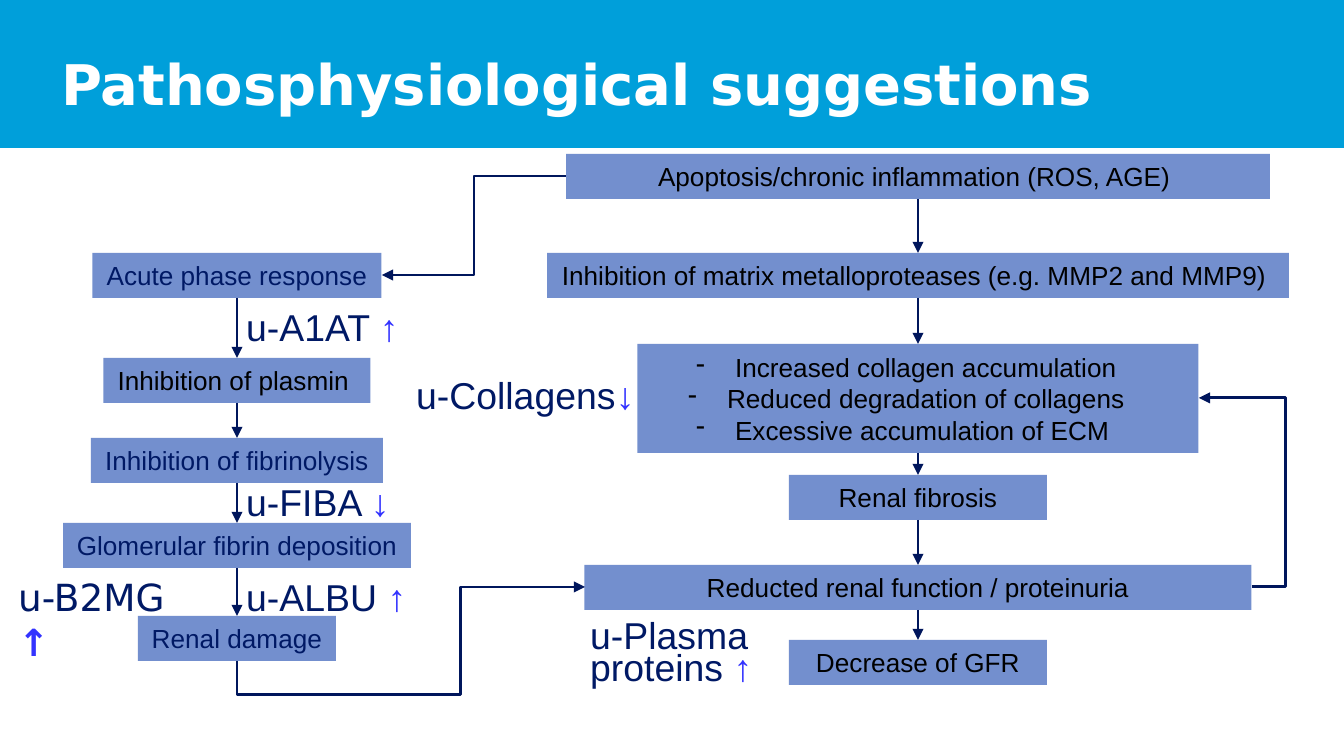
from lxml.etree import SubElement
from pptx import Presentation
from pptx.dml.color import RGBColor
from pptx.enum.shapes import MSO_CONNECTOR, MSO_SHAPE
from pptx.enum.text import MSO_ANCHOR, PP_ALIGN
from pptx.oxml.ns import qn
from pptx.util import Pt

PX = 914400 / 134.4  # EMU in one px
SLIDE_WIDTH, SLIDE_HEIGHT = 1344, 756

BAND_BLUE = RGBColor(0x00, 0x9F, 0xDA)
BOX_BLUE = RGBColor(0x73, 0x8F, 0xCE)
NAVY = RGBColor(0x00, 0x19, 0x65)
LINE_NAVY = RGBColor(0x00, 0x16, 0x5C)
ARROW_BLUE = RGBColor(0x33, 0x33, 0xFF)
BLACK = RGBColor(0x00, 0x00, 0x00)
WHITE = RGBColor(0xFF, 0xFF, 0xFF)

TITLE = "Pathosphysiological suggestions"
BOX_HEIGHT = 45

# Each column: centre x, then boxes as (lines, top, width, height, text colour)
COLUMNS = [
    (237, [
        (["Acute phase response"], 253, 289, BOX_HEIGHT, NAVY),
        (["Inhibition of plasmin "], 358, 267, BOX_HEIGHT, BLACK),
        (["Inhibition of fibrinolysis"], 438, 292, BOX_HEIGHT, NAVY),
        (["Glomerular fibrin deposition"], 523, 348, BOX_HEIGHT, NAVY),
        (["Renal damage"], 616, 198, BOX_HEIGHT, NAVY),
    ]),
    (918, [
        (["Apoptosis/chronic inflammation (ROS, AGE) "], 154, 704, BOX_HEIGHT, BLACK),
        (["Inhibition of matrix metalloproteases (e.g. MMP2 and MMP9) "],
         253, 742, BOX_HEIGHT, BLACK),
        ([" Increased collagen accumulation", " Reduced degradation of collagens",
          " Excessive accumulation of ECM "], 344, 561, 109, BLACK),
        (["Renal fibrosis"], 475, 258, BOX_HEIGHT, BLACK),
        (["Reducted renal function / proteinuria"], 565, 667, BOX_HEIGHT, BLACK),
        (["Decrease of GFR"], 640, 258, BOX_HEIGHT, BLACK),
    ]),
]

# Biomarkers: lines, arrow, left, top, width, height, font, line spacing
MARKERS = [
    (["u-Collagens"], "↓", 403, 366, 247, 59, "Arial", 1.0),
    (["u-Plasma", "proteins "], "↑", 577, 618, 196, 77, "Arial", 0.7),
    (["u-A1AT "], "↑", 233, 298, 181, 59, "Arial", 1.0),
    (["u-ALBU "], "↑", 233, 568, 188, 59, "Arial", 1.0),
    (["u-B2MG "], "↑", 5, 568, 211, 59, "DejaVu Sans", 1.0),
    (["u-FIBA "], "↓", 233, 473, 172, 59, "Arial", 1.0),
]

# Bent arrows: start, end, preset, bend positions, quarter turns
BENT_ARROWS = [
    ((566, 176), (382, 275), "bentConnector3", [50000], 0),
    ((1252, 587), (1199, 398), "bentConnector3", [-63700], 0),
    ((448, 798), (374, 450), "bentConnector4", [-45300, 64200], 1),
]


def emu(*lengths):
    return [round(length * PX) for length in lengths]


def set_font(font, size, color, name="Arial", bold=None):
    font.size, font.name, font.bold = Pt(size), name, bold
    font.color.rgb = color


def add_rectangle(slide, left, top, width, height, color):
    shape = slide.shapes.add_shape(MSO_SHAPE.RECTANGLE, *emu(left, top, width, height))
    shape.shadow.inherit = False
    shape.fill.solid()
    shape.fill.fore_color.rgb = color
    shape.line.fill.background()
    return shape


def add_box(slide, center, lines, top, width, height, color):
    shape = add_rectangle(slide, center - width / 2, top, width, height, BOX_BLUE)
    frame = shape.text_frame
    frame.word_wrap = len(lines) > 1
    frame.vertical_anchor = MSO_ANCHOR.MIDDLE
    for index, line in enumerate(lines):
        paragraph = frame.paragraphs[0] if index == 0 else frame.add_paragraph()
        paragraph.text = line
        paragraph.alignment = PP_ALIGN.CENTER
        if len(lines) > 1:
            SubElement(paragraph._p.get_or_add_pPr(), qn("a:buChar"), char="-")
        set_font(paragraph.font, 14, color)
    return shape


def add_marker(slide, lines, arrow, left, top, width, height, font_name, spacing):
    frame = slide.shapes.add_textbox(*emu(left, top, width, height)).text_frame
    frame.word_wrap = False
    for index, line in enumerate(lines):
        paragraph = frame.paragraphs[0] if index == 0 else frame.add_paragraph()
        paragraph.line_spacing = spacing
        run = paragraph.add_run()
        run.text = line
        set_font(run.font, 20, NAVY, font_name)
    run = paragraph.add_run()
    run.text = arrow
    set_font(run.font, 20, ARROW_BLUE, font_name, True)


def add_arrow(slide, kind, start=(0, 0), end=(0, 0)):
    connector = slide.shapes.add_connector(kind, *emu(*start, *end))
    connector.line.color.rgb = LINE_NAVY
    connector.line.width = Pt(1.5)
    SubElement(connector.line._get_or_add_ln(), qn("a:tailEnd"), type="triangle")
    SubElement(connector._element.spPr, qn("a:effectLst"))
    return connector


def add_bent_arrow(slide, start, end, preset, bends, quarter_turns):
    connector = add_arrow(slide, MSO_CONNECTOR.ELBOW, start, end)
    properties = connector._element.spPr
    properties.find(qn("a:xfrm")).set("rot", str(quarter_turns * 5400000))
    geometry = properties.find(qn("a:prstGeom"))
    geometry.set("prst", preset)
    guides = geometry.find(qn("a:avLst"))
    for number, bend in enumerate(bends, 1):
        SubElement(guides, qn("a:gd"), name=f"adj{number}", fmla=f"val {bend}")


def add_header(slide):
    add_rectangle(slide, 0, 0, SLIDE_WIDTH, 148, BAND_BLUE)
    frame = slide.shapes.add_textbox(*emu(61, 50, 1172, 74)).text_frame
    frame.margin_left = frame.margin_right = frame.margin_top = frame.margin_bottom = 0
    frame.word_wrap = True
    frame.vertical_anchor = MSO_ANCHOR.MIDDLE
    paragraph = frame.paragraphs[0]
    paragraph.text = TITLE
    paragraph.line_spacing = 0.9
    set_font(paragraph.font, 30, WHITE, "DejaVu Sans", True)


def main():
    presentation = Presentation()
    presentation.slide_width, presentation.slide_height = emu(SLIDE_WIDTH, SLIDE_HEIGHT)
    slide = presentation.slides.add_slide(presentation.slide_layouts[6])
    add_header(slide)

    # Columns of boxes, each joined to the next one down
    for center, boxes in COLUMNS:
        shapes = [add_box(slide, center, *box) for box in boxes]
        for upper, lower in zip(shapes, shapes[1:]):
            arrow = add_arrow(slide, MSO_CONNECTOR.STRAIGHT)
            arrow.begin_connect(upper, 2)
            arrow.end_connect(lower, 0)

    # Links between and around the columns
    for bent_arrow in BENT_ARROWS:
        add_bent_arrow(slide, *bent_arrow)

    # Biomarker labels
    for marker in MARKERS:
        add_marker(slide, *marker)

    presentation.save("out.pptx")


if __name__ == "__main__":
    main()
